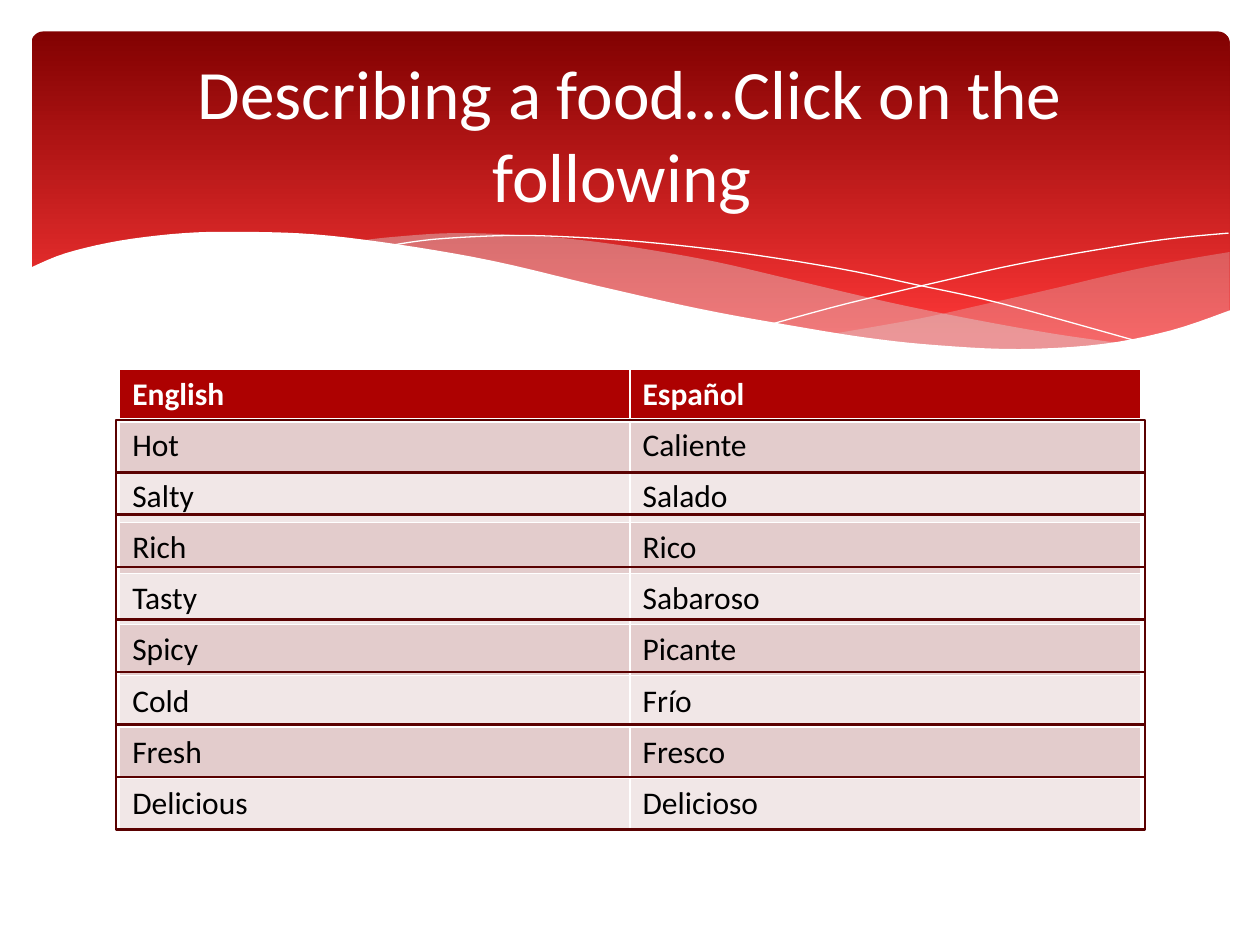
from dataclasses import dataclass
from itertools import accumulate

from lxml.etree import SubElement
from pptx import Presentation
from pptx.dml.color import RGBColor
from pptx.enum.shapes import MSO_SHAPE
from pptx.enum.text import MSO_ANCHOR, MSO_AUTO_SIZE, PP_ALIGN
from pptx.oxml.ns import qn
from pptx.util import Inches, Pt


@dataclass(frozen=True)
class Theme:
    font: str = "Calibri"
    title: float = 39.6
    body: float = 18
    white: str = "FFFFFF"
    black: str = "000000"
    dark: str = "820101"
    bright: str = "FE3737"
    haze: str = "DEDEE0"
    head: str = "AD0101"
    odd: str = "E3CCCC"
    even: str = "F1E7E7"
    frame: str = "5A0101"


THEME = Theme()

WORDS = [
    ("English", "Español"), ("Hot", "Caliente"), ("Salty", "Salado"),
    ("Rich", "Rico"), ("Tasty", "Sabaroso"), ("Spicy", "Picante"),
    ("Cold", "Frío"), ("Fresh", "Fresco"), ("Delicious", "Delicioso"),
]

# Knots of the banner's waves, in inches
RIGHT_TOP = [(9.76, 2), (9.35, 2.07), (8.91, 2.16), (8.32, 2.3),
             (7.79, 2.42), (7.29, 2.53), (6.61, 2.65)]
RIGHT_LOW = [(6.61, 2.65), (7.05, 2.71), (7.57, 2.76), (8.03, 2.78),
             (8.54, 2.76), (8.97, 2.7), (9.35, 2.62), (9.76, 2.47)]
MID_TOP = [(8.93, 2.73), (8.37, 2.65), (7.75, 2.54), (7.06, 2.4),
           (6.29, 2.22), (5.69, 2.08), (5.14, 1.98), (4.65, 1.91),
           (4.2, 1.87), (3.61, 1.85), (3.13, 1.88), (2.86, 1.91)]
MID_LOW = [(2.86, 1.91), (3.42, 1.99), (4.04, 2.11), (4.49, 2.22),
           (5.3, 2.4), (6.01, 2.55), (6.65, 2.66), (7.22, 2.74),
           (7.73, 2.77), (8.28, 2.78), (8.93, 2.73)]
FALL = [(3.09, 1.95), (3.44, 1.9), (4.01, 1.87), (4.5, 1.88), (5.1, 1.92),
        (5.82, 2), (6.65, 2.13), (7.27, 2.26), (7.95, 2.41), (9.07, 2.72)]
RISE = [(6.13, 2.57), (6.72, 2.41), (7.48, 2.23), (8.06, 2.1),
        (8.66, 1.99), (9.24, 1.9), (9.75, 1.85)]
EDGE = [(0.23, 2.13), (0.52, 2.01), (0.95, 1.91), (1.46, 1.85),
        (1.93, 1.84), (2.5, 1.86), (3.16, 1.94), (3.91, 2.07),
        (4.75, 2.27), (5.55, 2.45), (6.26, 2.58), (6.88, 2.68),
        (7.44, 2.74), (8.09, 2.77), (8.75, 2.73), (9.3, 2.62), (9.77, 2.46)]


def color(code):
    return RGBColor.from_string(code)


def paint(fill, code, alpha=None):
    fill.solid()
    fill.fore_color.rgb = color(code)
    if alpha is not None:
        tone = fill._xPr.find(".//" + qn("a:srgbClr"))
        SubElement(tone, qn("a:alpha"), val=str(alpha * 1000))


def write(frame, text, size, code, bold=False):
    part = frame.paragraphs[0]
    run = part.add_run()
    run.text = text
    run.font.name = THEME.font
    run.font.size = Pt(size)
    run.font.bold = bold
    run.font.color.rgb = color(code)
    return part


def smooth(knots, steps=5):
    """Points of a Catmull-Rom curve through the knots."""
    ends = [knots[0], *knots, knots[-1]]
    points = [knots[0]]
    for a, b, c, d in zip(ends, ends[1:], ends[2:], ends[3:]):
        for step in range(1, steps + 1):
            t = step / steps
            points.append(tuple(
                q + t / 2 * (r - p + t * (2 * p - 5 * q + 4 * r - s
                                          + t * (3 * (q - r) + s - p)))
                for p, q, r, s in zip(a, b, c, d)))
    return points


def trace(slide, points, close):
    spots = [(Inches(x), Inches(y)) for x, y in points]
    pen = slide.shapes.build_freeform(*spots[0])
    pen.add_line_segments(spots[1:], close=close)
    shape = pen.convert_to_shape()
    shape.shadow.inherit = False
    return shape


def add_wave(slide, points, code, alpha=None):
    shape = trace(slide, points, True)
    paint(shape.fill, code, alpha)
    shape.line.fill.background()


def add_curve(slide, knots):
    shape = trace(slide, smooth(knots), False)
    shape.fill.background()
    shape.line.color.rgb = color(THEME.white)
    shape.line.width = Pt(0)


def add_banner(slide):
    box = slide.shapes.add_shape(
        MSO_SHAPE.ROUNDED_RECTANGLE,
        Inches(0.25), Inches(0.25), Inches(9.51), Inches(2.7))
    box.adjustments[0] = 0.034
    box.shadow.inherit = False
    box.line.fill.background()
    box.fill.gradient()
    box.fill.gradient_angle = 270
    stops = ((0, THEME.dark), (0.9, THEME.bright))
    for stop, (place, code) in zip(box.fill.gradient_stops, stops):
        stop.position = place
        stop.color.rgb = color(code)

    add_wave(slide, smooth(RIGHT_TOP) + smooth(RIGHT_LOW), THEME.haze, 29)
    add_wave(slide, smooth(MID_TOP) + smooth(MID_LOW), THEME.haze, 40)
    add_curve(slide, FALL)
    add_curve(slide, RISE)
    add_wave(slide, smooth(EDGE) + [(9.77, 3.29), (0.23, 3.29)], THEME.white)


def add_title(slide, text):
    title = slide.shapes.title
    title.left, title.top = Inches(0.5), Inches(0.37)
    title.width, title.height = Inches(9), Inches(1.37)
    frame = title.text_frame
    frame.word_wrap = True
    frame.auto_size = MSO_AUTO_SIZE.NONE
    frame.vertical_anchor = MSO_ANCHOR.MIDDLE
    write(frame, text, THEME.title, THEME.white).alignment = PP_ALIGN.CENTER
    # Bring the title in front of the banner
    slide.shapes._spTree.append(title.element)


def set_edge(cell, side, width):
    line = SubElement(cell._tc.get_or_add_tcPr(), qn("a:ln" + side),
                      w=str(Pt(width)))
    fill = SubElement(line, qn("a:solidFill"))
    SubElement(fill, qn("a:srgbClr"), val=THEME.white)


def add_words(slide, rows):
    table = slide.shapes.add_table(
        len(rows), 2, Inches(0.95), Inches(2.93),
        Inches(8.1), Inches(3.65)).table
    table.horz_banding = False
    for i, row in enumerate(rows):
        head = i == 0
        back = THEME.head if head else THEME.odd if i % 2 else THEME.even
        for j, word in enumerate(row):
            cell = table.cell(i, j)
            for side in "LRTB":
                thick = (i, side) in ((0, "B"), (1, "T"))
                set_edge(cell, side, 3 if thick else 1)
            paint(cell.fill, back)
            write(cell.text_frame, word, THEME.body,
                  THEME.white if head else THEME.black, head)


def add_button(slide, top, height):
    shape = slide.shapes.add_shape(
        MSO_SHAPE.ACTION_BUTTON_CUSTOM,
        Inches(0.92), Inches(top), Inches(8.17), Inches(height))
    shape.shadow.inherit = False
    shape.fill.background()
    shape.line.color.rgb = color(THEME.frame)
    shape.line.width = Pt(1.25)


def main():
    deck = Presentation()
    deck.slide_width, deck.slide_height = Inches(10), Inches(7.5)
    slide = deck.slides.add_slide(deck.slide_layouts[5])

    add_banner(slide)
    add_words(slide, WORDS)
    add_title(slide, "Describing a food…Click on the following ")

    # One button over each word pair; the second is lower in height
    sizes = [5 / 12, 4 / 12] + [5 / 12] * 6
    for top, size in zip(accumulate(sizes, initial=10 / 3), sizes):
        add_button(slide, top, size)

    deck.save("out.pptx")


if __name__ == "__main__":
    main()
